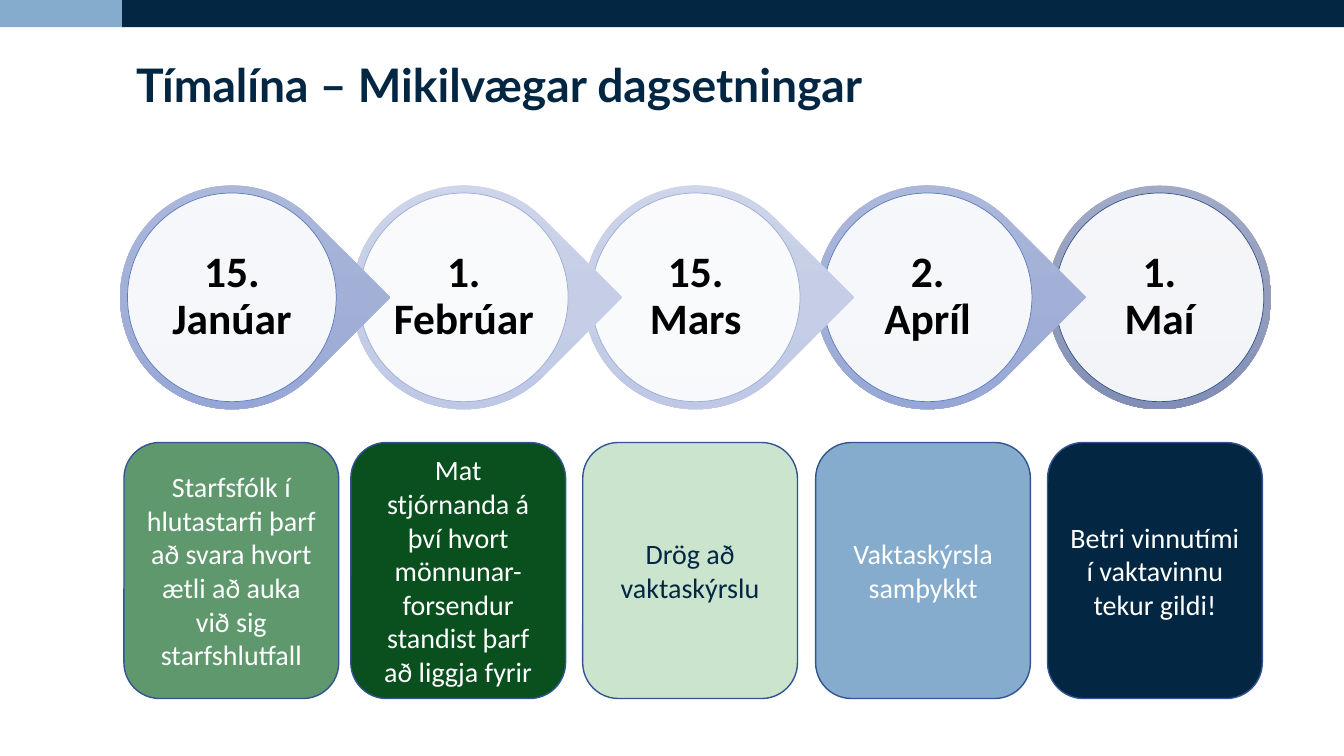
from copy import deepcopy
from dataclasses import dataclass

from lxml import etree
from pptx import Presentation
from pptx.dml.color import RGBColor
from pptx.enum import shapes, text
from pptx.oxml import ns
from pptx.shapes.autoshape import Shape
from pptx.slide import Slide
from pptx.text.text import TextFrame
from pptx.util import Inches, Pt


@dataclass(frozen=True)
class Theme:
    navy: str = "032742"
    sky: str = "85ABCD"
    white: str = "FFFFFF"
    black: str = "000000"
    outline: str = "325491"
    title_font: str = "Lato"
    body_font: str = "Calibri"
    title_size: int = 33
    date_size: int = 31
    task_size: int = 20


@dataclass(frozen=True)
class Tone:
    """Gradient of a marker and the line round its disc."""
    stops: tuple[str, str, str]
    rim: str


@dataclass(frozen=True)
class Milestone:
    day: str
    month: str
    tone: Tone
    task: str
    task_left: float
    task_fill: str
    task_color: str = Theme.white


MEDIUM = Tone(("B0BCDD", "A2B0D7", "92A4D4"), "5B7BC0")
PALE = Tone(("D2D8EC", "C5CEE6", "BCC7E4"), "9DACD6")
DARK = Tone(("A1AAC7", "949EBC", "818EB5"), "325491")

THEME = Theme()
MILESTONES = [
    Milestone("15.", "Janúar", MEDIUM,
              "Starfsfólk í hlutastarfi þarf að svara hvort ætli að auka við sig starfshlutfall",
              1.23, "60986E"),
    Milestone("1.", "Febrúar", PALE,
              "Mat stjórnanda á því hvort mönnunar-forsendur standist þarf að liggja fyrir",
              3.48, "09501E"),
    Milestone("15.", "Mars", PALE, "Drög að vaktaskýrslu", 5.78, "CBE4CE", THEME.navy),
    Milestone("2.", "Apríl", MEDIUM, "Vaktaskýrsla samþykkt", 8.09, THEME.sky),
    Milestone("1.", "Maí", DARK, "Betri vinnutími í vaktavinnu tekur gildi!", 10.39, THEME.navy),
]

MARKER_LEFT, MARKER_TOP, MARKER_SIZE, MARKER_PITCH = 1.19, 1.84, 2.22, 2.3
DISC_SIZE, DATE_SIZE = 2.07, 1.48


def add_shape(slide: Slide, kind: shapes.MSO_SHAPE, left: float, top: float,
              width: float, height: float, fill: str | None = None,
              line: str | None = None, weight: float = 1) -> Shape:
    shape = slide.shapes.add_shape(kind, Inches(left), Inches(top), Inches(width), Inches(height))
    shape.shadow.inherit = False
    if fill:
        shape.fill.solid()
        shape.fill.fore_color.rgb = RGBColor.from_string(fill)
    if line:
        shape.line.color.rgb = RGBColor.from_string(line)
        shape.line.width = Pt(weight)
    else:
        shape.line.fill.background()
    return shape


def write(frame: TextFrame, lines: list[str], font: str, size: int, color: str,
          bold: bool = False, align: text.PP_ALIGN = text.PP_ALIGN.CENTER,
          anchor: text.MSO_ANCHOR = text.MSO_ANCHOR.MIDDLE, spacing: float = 1.0) -> None:
    """Fill the frame with one paragraph, broken between the given lines."""
    frame.word_wrap = True
    frame.auto_size = text.MSO_AUTO_SIZE.NONE
    frame.vertical_anchor = anchor
    paragraph = frame.paragraphs[0]
    paragraph.alignment = align
    paragraph.line_spacing = spacing
    for number, line in enumerate(lines):
        if number:
            paragraph.add_line_break()
        run = paragraph.add_run()
        run.text = line
        run.font.name = font
        run.font.size = Pt(size)
        run.font.bold = bold
        run.font.color.rgb = RGBColor.from_string(color)


def shade(marker: Shape, colors: tuple[str, str, str]) -> None:
    """Give the marker a three-stop gradient that runs straight down."""
    marker.fill.gradient()
    marker.fill.gradient_angle = 270
    gradient = marker.element.spPr.find(ns.qn("a:gradFill"))
    gradient.set("rotWithShape", "0")
    stop_list = gradient.find(ns.qn("a:gsLst"))
    stop_list.insert(1, deepcopy(stop_list[0]))
    for stop, position, color in zip(marker.fill.gradient_stops, (0, 0.5, 1), colors):
        stop.position = position
        stop.color.rgb = RGBColor.from_string(color)


def set_opacity(shape: Shape, percent: int) -> None:
    color = shape.element.spPr.find(ns.qn("a:solidFill"))[0]
    etree.SubElement(color, ns.qn("a:alpha")).set("val", str(percent * 1000))


def add_marker(slide: Slide, milestone: Milestone, index: int, last: bool) -> None:
    left = MARKER_LEFT + index * MARKER_PITCH
    kind = shapes.MSO_SHAPE.OVAL if last else shapes.MSO_SHAPE.TEAR
    marker = add_shape(slide, kind, left, MARKER_TOP, MARKER_SIZE, MARKER_SIZE)
    if not last:
        marker.adjustments[0] = 1
        marker.rotation = 45
    shade(marker, milestone.tone.stops)

    inset = (MARKER_SIZE - DISC_SIZE) / 2
    disc = add_shape(slide, shapes.MSO_SHAPE.OVAL, left + inset, MARKER_TOP + inset,
                     DISC_SIZE, DISC_SIZE, THEME.white, milestone.tone.rim, 0.5)
    set_opacity(disc, 90)

    inset = (MARKER_SIZE - DATE_SIZE) / 2
    date = slide.shapes.add_textbox(Inches(left + inset), Inches(MARKER_TOP + inset),
                                    Inches(DATE_SIZE), Inches(DATE_SIZE)).text_frame
    date.margin_left = date.margin_right = date.margin_top = date.margin_bottom = Inches(0.04)
    write(date, [milestone.day, milestone.month], THEME.body_font, THEME.date_size,
          THEME.black, bold=True, spacing=0.9)


def add_task(slide: Slide, milestone: Milestone) -> None:
    task = add_shape(slide, shapes.MSO_SHAPE.ROUNDED_RECTANGLE, milestone.task_left, 4.39,
                     2.13, 2.54, milestone.task_fill, THEME.outline)
    write(task.text_frame, [milestone.task], THEME.body_font, THEME.task_size,
          milestone.task_color)


def add_heading(slide: Slide) -> None:
    add_shape(slide, shapes.MSO_SHAPE.RECTANGLE, 1.21, 0, 12.12, 0.27, THEME.navy)
    add_shape(slide, shapes.MSO_SHAPE.RECTANGLE, 0, 0, 1.21, 0.27, THEME.sky)
    title = slide.shapes.title
    title.left, title.top = Inches(1.25), Inches(0.57)
    title.width, title.height = Inches(10.83), Inches(0.86)
    write(title.text_frame, ["Tímalína – Mikilvægar dagsetningar"], THEME.title_font,
          THEME.title_size, THEME.navy, bold=True, align=text.PP_ALIGN.LEFT,
          anchor=text.MSO_ANCHOR.TOP, spacing=0.9)


def main() -> None:
    deck = Presentation()
    deck.slide_width, deck.slide_height = Inches(13.33), Inches(7.5)
    slide = deck.slides.add_slide(deck.slide_layouts[5])
    add_heading(slide)
    # Each marker's tip overlaps the next one, so the row is stacked from the right.
    final = len(MILESTONES) - 1
    for index, milestone in reversed(list(enumerate(MILESTONES))):
        add_marker(slide, milestone, index, last=index == final)
    for milestone in MILESTONES:
        add_task(slide, milestone)
    deck.save("out.pptx")


if __name__ == "__main__":
    main()
